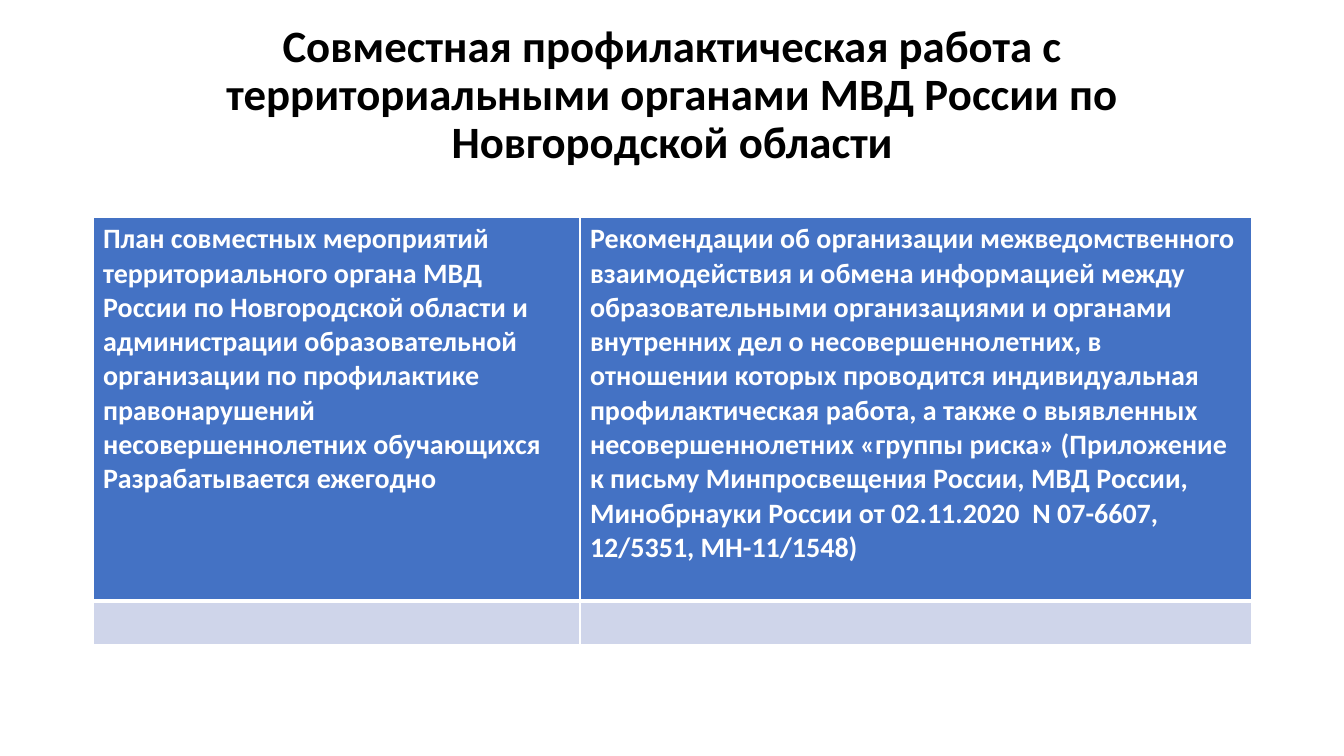
from pptx import Presentation
from pptx import util as u
from pptx.dml.color import RGBColor
from pptx.enum import text
from pptx.oxml import parse_xml
from pptx.oxml.ns import nsdecls

# Content
TITLE = "Совместная профилактическая работа с территориальными органами МВД России по Новгородской области"
ROWS = [
    (
        ["План совместных мероприятий территориального органа МВД России по "
         "Новгородской области и администрации образовательной организации по "
         "профилактике правонарушений несовершеннолетних обучающихся",
         "Разрабатывается ежегодно"],
        ["Рекомендации об организации межведомственного взаимодействия и обмена "
         "информацией между образовательными организациями и органами внутренних "
         "дел о несовершеннолетних, в отношении которых проводится индивидуальная "
         "профилактическая работа, а также о выявленных несовершеннолетних «группы "
         "риска» (Приложение к письму Минпросвещения России, МВД России, "
         "Минобрнауки России от 02.11.2020  N 07-6607, 12/5351, МН-11/1548)"],
    ),
    ([], []),
]

# Layout in px
SLIDE = (1344, 756)
LEFT, TITLE_TOP, TITLE_HEIGHT, TABLE_TOP = 93, 40, 112, 217
COLUMNS = (487, 672)
ROW_HEIGHTS = (384, 44)

COLORS = {"title": "000000", "header": "4472C4", "body": "CFD5EA", "white": "FFFFFF"}
TITLE_FONT = {"name": "Calibri", "size": u.Pt(32), "bold": True}
CELL_FONT = {"name": "Calibri", "size": u.Pt(20), "bold": True}


def px(length):
    return u.Emu(round(length * 914400 / 100.8))


def write(paragraph, words, font_format, color):
    run = paragraph.add_run()
    run.text = words
    for key, value in font_format.items():
        setattr(run.font, key, value)
    run.font.color.rgb = RGBColor.from_string(COLORS[color])


def set_borders(cell, bottom_width):
    widths = {"lnL": 1, "lnR": 1, "lnT": 1, "lnB": bottom_width}
    properties = cell._tc.get_or_add_tcPr()
    for place, (side, width) in enumerate(widths.items()):
        properties.insert(place, parse_xml(
            f'<a:{side} {nsdecls("a")} w="{u.Pt(width)}"><a:solidFill>'
            f'<a:srgbClr val="{COLORS["white"]}"/></a:solidFill></a:{side}>'))


def main():
    deck = Presentation()
    deck.slide_width, deck.slide_height = map(px, SLIDE)
    slide = deck.slides.add_slide(deck.slide_layouts[6])
    width = sum(COLUMNS)

    # Title
    heading = slide.shapes.add_textbox(*map(px, (LEFT, TITLE_TOP, width, TITLE_HEIGHT))).text_frame
    heading.word_wrap = True
    heading.vertical_anchor = text.MSO_ANCHOR.MIDDLE
    heading.paragraphs[0].alignment = text.PP_ALIGN.CENTER
    heading.paragraphs[0].line_spacing = 0.9
    write(heading.paragraphs[0], TITLE, TITLE_FONT, "title")

    # Table of joint documents
    documents = slide.shapes.add_table(
        len(ROWS), len(COLUMNS), *map(px, (LEFT, TABLE_TOP, width, sum(ROW_HEIGHTS)))).table
    for column, column_width in zip(documents.columns, COLUMNS):
        column.width = px(column_width)
    for r, (entries, height) in enumerate(zip(ROWS, ROW_HEIGHTS)):
        documents.rows[r].height = px(height)
        for c, lines in enumerate(entries):
            cell = documents.cell(r, c)
            cell.fill.solid()
            cell.fill.fore_color.rgb = RGBColor.from_string(COLORS["body" if r else "header"])
            set_borders(cell, 1 if r else 3)
            for i, line in enumerate(lines):
                frame = cell.text_frame
                paragraph = frame.add_paragraph() if i else frame.paragraphs[0]
                write(paragraph, line, CELL_FONT, "white")

    deck.save("out.pptx")


if __name__ == "__main__":
    main()
